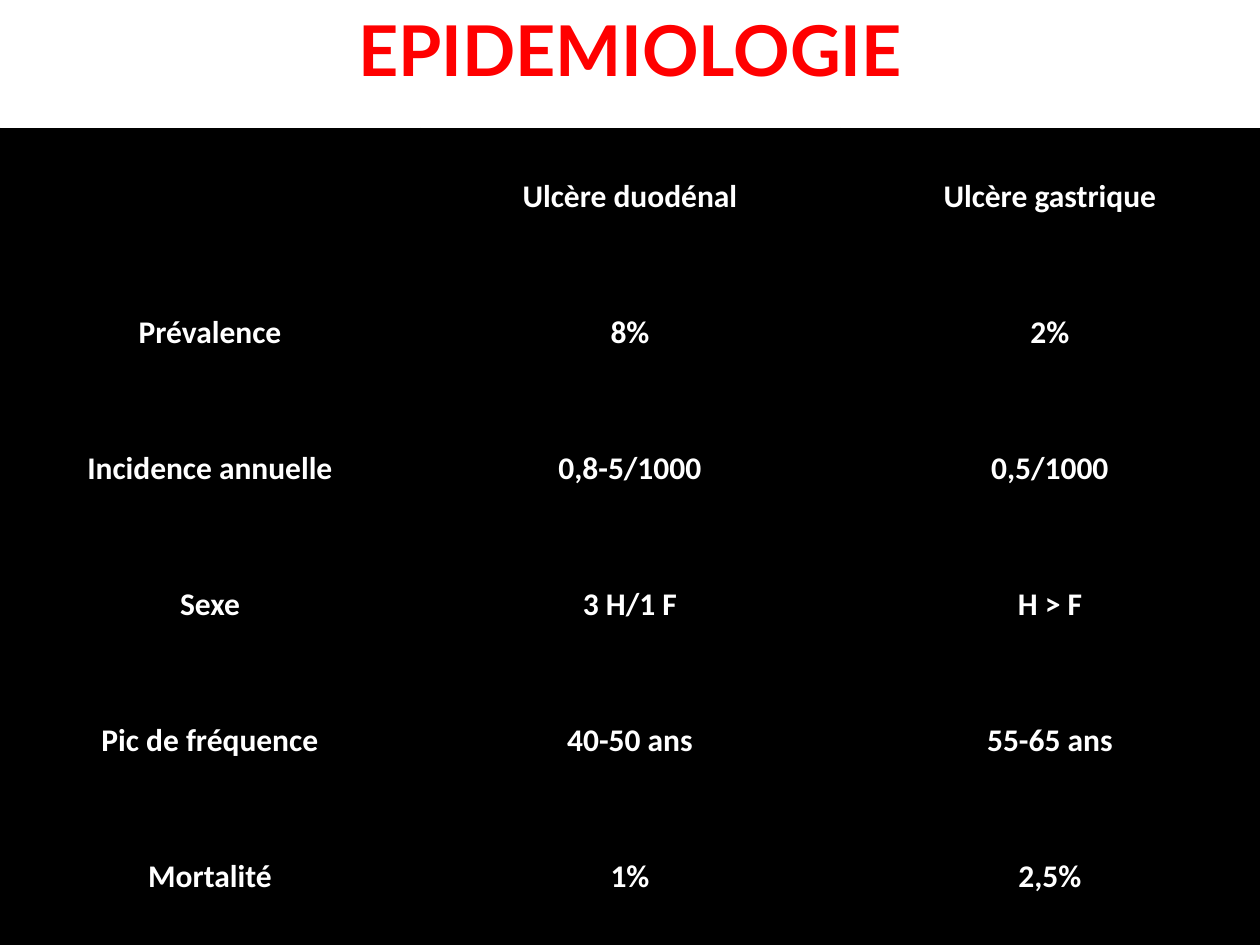
from pptx import Presentation
from pptx.dml.color import RGBColor
from pptx.enum.text import MSO_ANCHOR, PP_ALIGN
from pptx.oxml import parse_xml
from pptx.oxml.ns import nsdecls
from pptx.util import Pt

BLACK = RGBColor(0x00, 0x00, 0x00)
WHITE = RGBColor(0xFF, 0xFF, 0xFF)
RED = RGBColor(0xFF, 0x00, 0x00)

WIDTH, HEIGHT = 720, 540
TABLE_TOP = 73.5

ROWS = [
    ("", "Ulcère duodénal", "Ulcère gastrique"),
    ("Prévalence", "8%", "2%"),
    ("Incidence annuelle", "0,8-5/1000", "0,5/1000"),
    ("Sexe", "3 H/1 F", "H > F"),
    ("Pic de fréquence", "40-50 ans", "55-65 ans"),
    ("Mortalité", "1%", "2,5%"),
]


def format_text(p, font, size, color):
    p.alignment = PP_ALIGN.CENTER
    for r in p.runs:
        r.font.name = font
        r.font.size = Pt(size)
        r.font.bold = True
        r.font.color.rgb = color


def add_title(slide, text, left, top, width, height):
    box = slide.shapes.add_textbox(Pt(left), Pt(top), Pt(width), Pt(height))
    tf = box.text_frame
    tf.word_wrap = True
    tf.text = text
    format_text(tf.paragraphs[0], "Lato", 40, RED)


def add_borders(cell, color, width):
    tc_pr = cell._tc.get_or_add_tcPr()
    for i, side in enumerate(("lnL", "lnR", "lnT", "lnB")):
        # Borders must come before the fill in the cell properties.
        tc_pr.insert(i, parse_xml(
            f'<a:{side} {nsdecls("a")} w="{Pt(width)}"><a:solidFill>'
            f'<a:srgbClr val="{color}"/></a:solidFill></a:{side}>'))


def add_epidemiology_table(slide, rows, left, top, width, height):
    n_rows, n_cols = len(rows), len(rows[0])
    table = slide.shapes.add_table(
        n_rows, n_cols, Pt(left), Pt(top), Pt(width), Pt(height)).table
    for column in table.columns:
        column.width = Pt(width / n_cols)
    for row, texts in zip(table.rows, rows):
        row.height = Pt(height / n_rows)
        for cell, text in zip(row.cells, texts):
            cell.fill.solid()
            cell.fill.fore_color.rgb = BLACK
            add_borders(cell, BLACK, 1)
            cell.vertical_anchor = MSO_ANCHOR.MIDDLE
            if text:
                cell.text = text
                format_text(cell.text_frame.paragraphs[0], "Calibri", 18, WHITE)


def main():
    prs = Presentation()
    prs.slide_width, prs.slide_height = Pt(WIDTH), Pt(HEIGHT)
    slide = prs.slides.add_slide(prs.slide_layouts[6])
    add_title(slide, "EPIDEMIOLOGIE", 0, 0, WIDTH, 55.5)
    add_epidemiology_table(slide, ROWS, 0, TABLE_TOP, WIDTH, HEIGHT - TABLE_TOP)
    prs.save("out.pptx")


if __name__ == "__main__":
    main()
